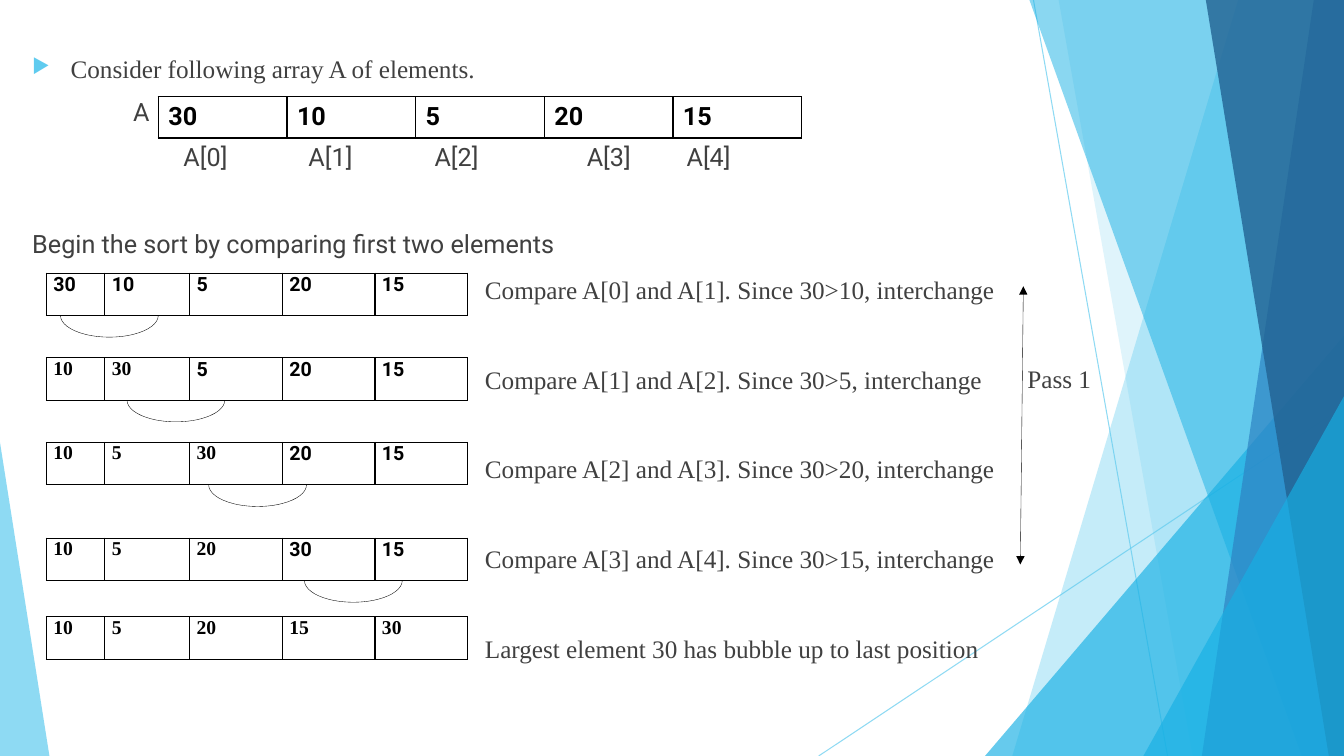
from lxml import etree
from pptx import Presentation
from pptx.dml.color import RGBColor
from pptx.enum.shapes import MSO_CONNECTOR, MSO_SHAPE
from pptx.enum.text import MSO_ANCHOR, PP_ALIGN
from pptx.oxml import parse_xml
from pptx.oxml.ns import nsdecls, qn
from pptx.util import Inches, Pt

LINE = MSO_CONNECTOR.STRAIGHT
TRIANGLE = MSO_SHAPE.ISOSCELES_TRIANGLE
ARC = MSO_SHAPE.ARC
MIDDLE, TOP = MSO_ANCHOR.MIDDLE, MSO_ANCHOR.TOP
LEFT, JUSTIFY = PP_ALIGN.LEFT, PP_ALIGN.JUSTIFY

SKY = RGBColor(0x5F, 0xCB, 0xEF)
CYAN = RGBColor(0x17, 0xB0, 0xE4)
BLUE = RGBColor(0x2E, 0x83, 0xC3)
NAVY = RGBColor(0x22, 0x62, 0x92)
GREY = RGBColor(0x40, 0x40, 0x40)
BLACK = RGBColor(0, 0, 0)
WHITE = RGBColor(0xFF, 0xFF, 0xFF)

SANS, SERIF = "Roboto", "Times New Roman"
WIDE, HIGH = 13.33, 7.5

ARRAY = [30, 10, 5, 20, 15]
LABELS = [1.82, 3.06, 4.31, 5.82, 6.81]
COLS = [0.58, 0.84, 0.92, 0.92, 0.92]
TOPS = [2.71, 3.55, 4.39, 5.34, 6.12]
SERIFS = [0, 2, 3, 3, 5]  # leading cells set in the serif font, per row
ARCS = [0.6, 1.26, 2.07, 3.02]
NOTES = [
    "Compare A[0] and A[1]. Since 30>10, interchange",
    "Compare A[1] and A[2]. Since 30>5, interchange",
    "Compare A[2] and A[3]. Since 30>20, interchange",
    "Compare A[3] and A[4]. Since 30>15, interchange",
    "Largest element 30 has bubble up to last position",
]


def fade(fill, alpha):
    """Set the opacity, in percent, of a solid fill inside the element."""
    color = next(fill.iter(qn("a:srgbClr")))
    etree.SubElement(color, qn("a:alpha")).set("val", str(alpha * 1000))


def paint(shape, color, alpha):
    shape.shadow.inherit = False
    shape.fill.solid()
    shape.fill.fore_color.rgb = color
    shape.line.fill.background()
    fade(shape._element.spPr, alpha)


def write(frame, lines, font=SANS, size=18, color=GREY, bold=False,
          align=LEFT, gap=0):
    for i, text in enumerate(lines):
        para = frame.paragraphs[0] if i == 0 else frame.add_paragraph()
        para.alignment = align
        para.space_before = Pt(gap if i else 0)
        run = para.add_run()
        run.text = text
        run.font.name = font
        run.font.size = Pt(size)
        run.font.bold = bold
        run.font.color.rgb = color


def label(slide, x, y, w, lines, **style):
    """Place text whose first line starts exactly at x, y."""
    box = slide.shapes.add_textbox(Inches(x), Inches(y), Inches(w), Inches(0.3))
    frame = box.text_frame
    frame.word_wrap = True
    frame.margin_left = frame.margin_right = 0
    frame.margin_top = frame.margin_bottom = 0
    write(frame, lines, **style)
    return frame


def bullet(para, indent):
    props = para._p.get_or_add_pPr()
    props.set("marL", str(Inches(indent)))
    props.set("indent", str(-Inches(indent)))
    for xml in (f'<a:buClr {nsdecls("a")}><a:srgbClr val="{SKY}"/></a:buClr>',
                f'<a:buSzPct {nsdecls("a")} val="80000"/>',
                f'<a:buChar {nsdecls("a")} char="▶"/>'):
        props.append(parse_xml(xml))


def line(slide, x1, y1, x2, y2, color, width):
    link = slide.shapes.add_connector(
        LINE, Inches(x1), Inches(y1), Inches(x2), Inches(y2))
    link.line.color.rgb = color
    link.line.width = Pt(width)
    etree.SubElement(link._element.spPr, qn("a:effectLst"))
    return link


def wedge(slide, x, y, w, h, lean, color, alpha):
    shape = slide.shapes.add_shape(
        TRIANGLE, Inches(x), Inches(y), Inches(w), Inches(h))
    shape.adjustments[0] = lean
    paint(shape, color, alpha)


def band(slide, top, foot, color, alpha):
    """Fill from a slanted left edge to the right side of the slide."""
    form = slide.shapes.build_freeform(Inches(top), 0)
    form.add_line_segments(
        [(Inches(x), Inches(y))
         for x, y in ((WIDE, 0), (WIDE, HIGH), (foot, HIGH))], close=True)
    paint(form.convert_to_shape(), color, alpha)


def backdrop(slide):
    for ends in ((10.25, 0, 11.58, HIGH), (WIDE, 4.03, 8.12, HIGH)):
        fade(line(slide, *ends, SKY, 0.75)._element.spPr, 70)
    band(slide, 12.28, 10.04, SKY, 36)
    band(slide, 10.5, 11.83, SKY, 20)
    wedge(slide, 9.77, 3.33, 3.56, 4.17, 1, CYAN, 66)
    band(slide, 10.21, 12.91, CYAN, 50)
    band(slide, 13.03, 11.92, BLUE, 70)
    band(slide, 11.96, 13.18, NAVY, 80)
    wedge(slide, 11.34, 3.93, 1.99, 3.57, 1, CYAN, 66)
    wedge(slide, 0, 4.39, 0.49, 3.11, 0, SKY, 70)


def border(cell):
    props = cell._tc.get_or_add_tcPr()
    for i, side in enumerate(("lnL", "lnR", "lnT", "lnB")):
        props.insert(i, parse_xml(
            f'<a:{side} {nsdecls("a")} w="12700"><a:solidFill>'
            f'<a:srgbClr val="{BLACK}"/></a:solidFill></a:{side}>'))


def strip(slide, x, y, h, cols, values, serif=0, pad=(0.1, 0.05),
          anchor=TOP, **style):
    """Draw an array as a one-row table."""
    table = slide.shapes.add_table(
        1, len(cols), Inches(x), Inches(y), Inches(sum(cols)), Inches(h)).table
    table.first_row = table.horz_banding = False
    table.rows[0].height = Inches(h)
    for i, (width, value) in enumerate(zip(cols, values)):
        table.columns[i].width = Inches(width)
        cell = table.cell(0, i)
        cell.margin_left = cell.margin_right = Inches(pad[0])
        cell.margin_top = cell.margin_bottom = Inches(pad[1])
        cell.vertical_anchor = anchor
        cell.fill.solid()
        cell.fill.fore_color.rgb = WHITE
        border(cell)
        write(cell.text_frame, [str(value)], color=BLACK, bold=True,
              font=SERIF if i < serif else SANS, **style)


def intro(slide, x, y):
    head = label(slide, x, y, 8, ["Consider following array A of elements."],
                 font=SERIF)
    bullet(head.paragraphs[0], 0.38)
    label(slide, x + 1, y + 0.43, 0.25, ["A"])
    strip(slide, x + 1.25, y + 0.43, 0.41, [1.276] * 5, ARRAY, anchor=MIDDLE)
    for i, left in enumerate(LABELS):
        label(slide, left, y + 0.87, 0.8, [f"A[{i}]"])
    label(slide, x, y + 1.74, 8,
          ["Begin the sort by comparing first two elements"])


def swap(slide, x, y):
    """Hang a half ellipse below the two cells that change places."""
    w, h = 0.97, 0.43
    arc = slide.shapes.add_shape(
        ARC, Inches(x), Inches(y - h / 2), Inches(w), Inches(h))
    arc.adjustments[0] = 0
    arc.adjustments[1] = 108  # 180 degrees
    arc.shadow.inherit = False
    arc.fill.background()
    arc.line.color.rgb = BLACK
    arc.line.width = Pt(0.25)


def steps(slide, x, h):
    row = list(ARRAY)
    for i, (top, serif) in enumerate(zip(TOPS, SERIFS)):
        strip(slide, x, top, h, COLS, row, serif=serif, pad=(0.07, 0),
              size=14, align=JUSTIFY)
        if i < len(ARCS):
            swap(slide, ARCS[i], top + h)
            row[i], row[i + 1] = sorted(row[i:i + 2])


def notes(slide, x, y):
    label(slide, x, y, 5.3, NOTES, font=SERIF, gap=42.5)
    label(slide, x + 5.38, y + 0.88, 0.9, ["Pass 1"], font=SERIF)
    span = line(slide, x + 5.34, y + 0.12, x + 5.31, y + 2.88, BLACK, 0.25)
    stroke = span.line._get_or_add_ln()
    for end in ("a:headEnd", "a:tailEnd"):
        etree.SubElement(stroke, qn(end)).set("type", "triangle")


def main():
    deck = Presentation()
    deck.slide_width, deck.slide_height = Inches(WIDE), Inches(HIGH)
    slide = deck.slides.add_slide(deck.slide_layouts[6])
    backdrop(slide)
    intro(slide, 0.32, 0.53)
    steps(slide, 0.46, 0.42)
    notes(slide, 4.81, 2.72)
    deck.save("out.pptx")


if __name__ == "__main__":
    main()
